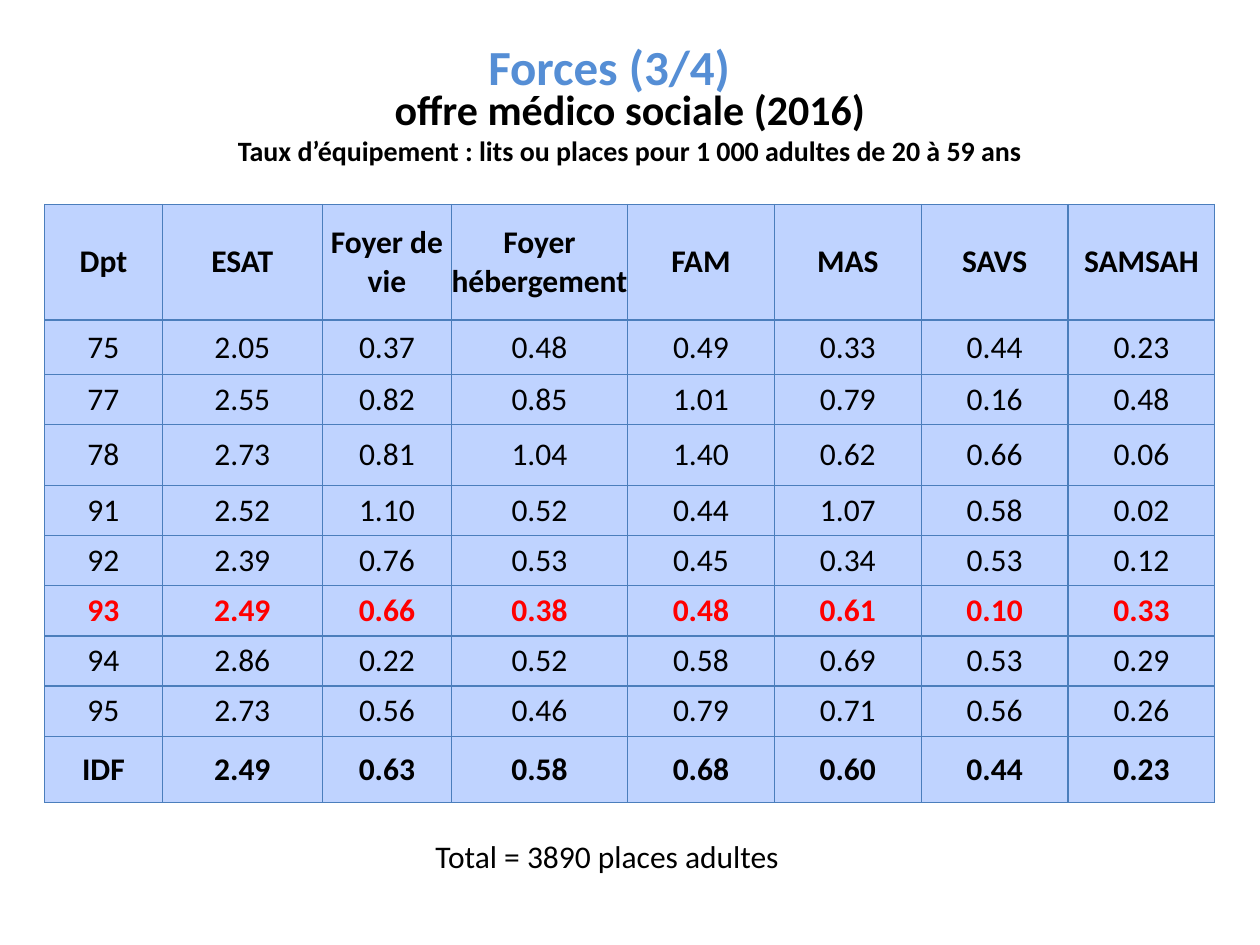
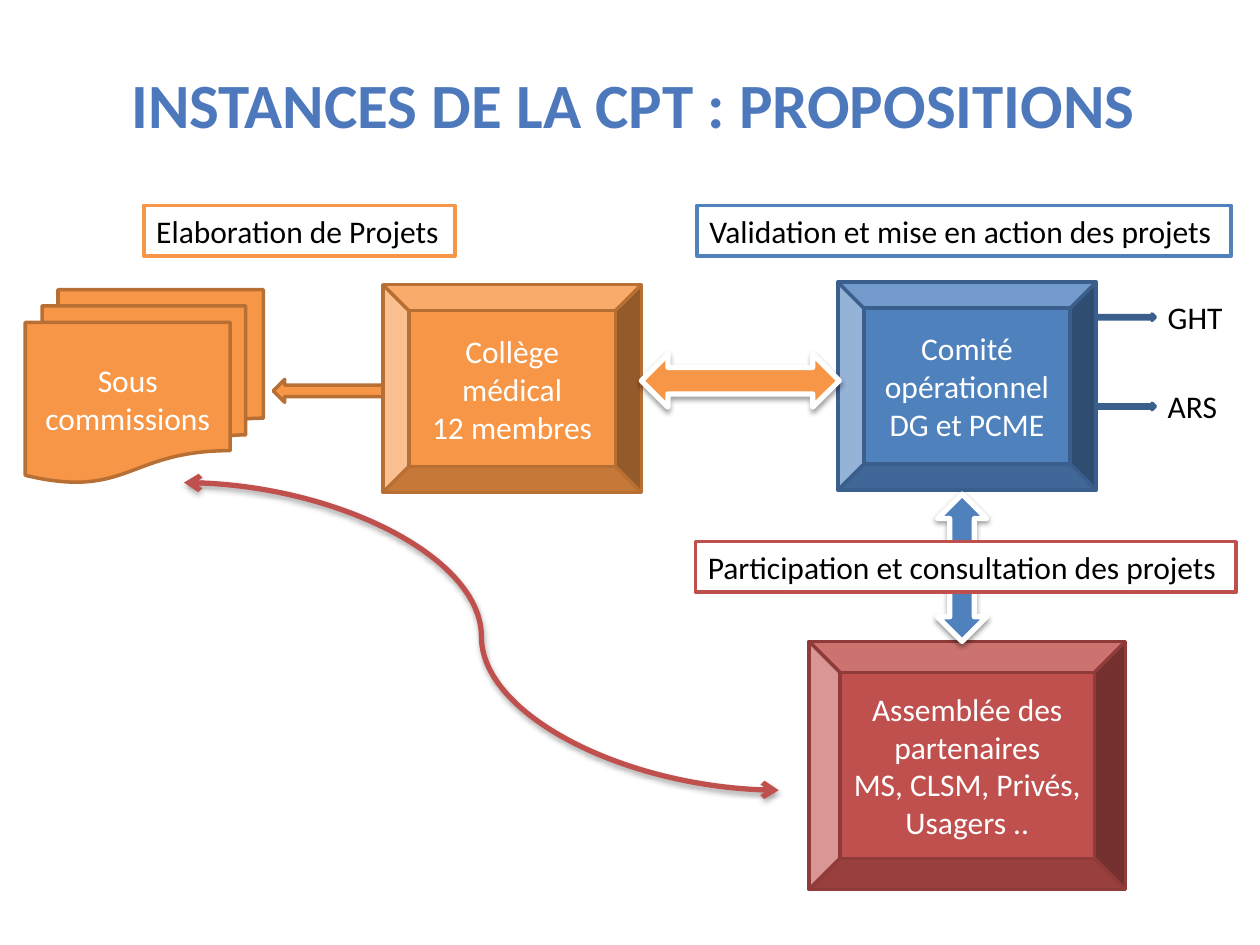
from dataclasses import dataclass

from lxml import etree
from pptx import Presentation
from pptx import util as u
from pptx.dml.color import RGBColor
from pptx.enum import shapes, text
from pptx.oxml import ns

SHAPE = shapes.MSO_SHAPE
ALIGN = text.PP_ALIGN
ANCHOR = text.MSO_ANCHOR


@dataclass(frozen=True)
class Theme:
    font: str = "Calibri"
    black: str = "000000"
    white: str = "FFFFFF"
    red: str = "FF0000"
    heading: str = "558ED5"
    title: str = "4D79BC"
    cell: str = "BFD3FF"
    grid: str = "4B7EBC"
    orange: str = "F79646"
    orange_edge: str = "B76F34"
    blue: str = "4F81BD"
    blue_edge: str = "3A5F8C"
    brick: str = "C0504D"
    brick_edge: str = "8E3B39"
    title_size: float = 36
    heading_size: float = 28
    subtitle_size: float = 24
    note_size: float = 16
    body_size: float = 18
    edge: float = 2
    thick: float = 3
    hairline: float = 0.75


THEME = Theme()

HEADERS = ["Dpt", "ESAT", "Foyer de vie", "Foyer hébergement",
           "FAM", "MAS", "SAVS", "SAMSAH"]
RATES = [
    ["75", "2.05", "0.37", "0.48", "0.49", "0.33", "0.44", "0.23"],
    ["77", "2.55", "0.82", "0.85", "1.01", "0.79", "0.16", "0.48"],
    ["78", "2.73", "0.81", "1.04", "1.40", "0.62", "0.66", "0.06"],
    ["91", "2.52", "1.10", "0.52", "0.44", "1.07", "0.58", "0.02"],
    ["92", "2.39", "0.76", "0.53", "0.45", "0.34", "0.53", "0.12"],
    ["93", "2.49", "0.66", "0.38", "0.48", "0.61", "0.10", "0.33"],
    ["94", "2.86", "0.22", "0.52", "0.58", "0.69", "0.53", "0.29"],
    ["95", "2.73", "0.56", "0.46", "0.79", "0.71", "0.56", "0.26"],
    ["IDF", "2.49", "0.63", "0.58", "0.68", "0.60", "0.44", "0.23"],
]
COLUMN_WIDTHS = [2.37, 3.23, 2.6, 3.55] + [2.96] * 4
ROW_HEIGHTS = [2.33, 1.1, 1.01, 1.23] + [1.01] * 5 + [1.34]


def cm(*lengths):
    return [u.Cm(length) for length in lengths]


def rgb(color):
    return RGBColor.from_string(color)


def add_span(para, words, size=THEME.body_size, color=THEME.black, bold=False):
    span = para.add_run()
    span.text = words
    span.font.name = THEME.font
    span.font.size = u.Pt(size)
    span.font.bold = bold
    span.font.color.rgb = rgb(color)


def add_effects(shape, shadow_alpha=None):
    """End the shape's properties with an effect list: empty, or a soft shadow below."""
    effects = etree.SubElement(shape._element.spPr, ns.qn("a:effectLst"))
    if shadow_alpha is None:
        return
    shadow = etree.SubElement(
        effects, ns.qn("a:outerShdw"), blurRad=str(u.Pt(3.1)),
        dist=str(u.Pt(1.7)), dir="5400000", rotWithShape="0")
    color = etree.SubElement(shadow, ns.qn("a:srgbClr"), val=THEME.black)
    etree.SubElement(color, ns.qn("a:alpha"), val=str(shadow_alpha * 1000))


def set_line(line, color, width):
    line.color.rgb = rgb(color)
    line.width = u.Pt(width)


def place_title(page, at, anchor=ANCHOR.MIDDLE):
    """Position the title placeholder and return its empty centred paragraph."""
    title = page.shapes.title
    title.left, title.top, title.width, title.height = cm(*at)
    frame = title.text_frame
    frame.auto_size = text.MSO_AUTO_SIZE.NONE
    frame.word_wrap = True
    frame.vertical_anchor = anchor
    if anchor == ANCHOR.TOP:
        frame.margin_top = 0
    para = frame.paragraphs[0]
    para.alignment = ALIGN.CENTER
    return para


def add_label(page, at, words, edge=None):
    """Add one unwrapped line of text, on white with a border if edge is given."""
    box = page.shapes.add_textbox(*cm(*at))
    frame = box.text_frame
    frame.word_wrap = False
    frame.auto_size = text.MSO_AUTO_SIZE.SHAPE_TO_FIT_TEXT
    add_span(frame.paragraphs[0], words)
    if edge:
        box.fill.solid()
        box.fill.fore_color.rgb = rgb(THEME.white)
        set_line(box.line, edge, THEME.edge)


def add_figure(page, kind, at, fill, edge, lines=(), width=THEME.edge, shadow_alpha=None):
    figure = page.shapes.add_shape(kind, *cm(*at))
    figure.fill.solid()
    figure.fill.fore_color.rgb = rgb(fill)
    set_line(figure.line, edge, width)
    add_effects(figure, shadow_alpha)
    frame = figure.text_frame
    frame.word_wrap = True
    frame.vertical_anchor = ANCHOR.MIDDLE
    for index, words in enumerate(lines):
        para = frame.add_paragraph() if index else frame.paragraphs[0]
        para.alignment = ALIGN.CENTER
        add_span(para, words, color=THEME.white)


def add_curve(page, start, end, color):
    """Add a curved connector with an open arrowhead at each end."""
    curve = page.shapes.add_connector(shapes.MSO_CONNECTOR.CURVE, *cm(*start, *end))
    set_line(curve.line, color, THEME.thick)
    line = curve._element.spPr.find(ns.qn("a:ln"))
    for tip in ("a:headEnd", "a:tailEnd"):
        etree.SubElement(line, ns.qn(tip), type="arrow")
    add_effects(curve, shadow_alpha=35)


def style_cell(cell, words, color, bold):
    properties = cell._tc.get_or_add_tcPr()
    for side in ("a:lnL", "a:lnR", "a:lnT", "a:lnB"):
        border = etree.SubElement(properties, ns.qn(side), w=str(u.Pt(THEME.hairline)))
        paint = etree.SubElement(border, ns.qn("a:solidFill"))
        etree.SubElement(paint, ns.qn("a:srgbClr"), val=THEME.grid)
    cell.fill.solid()
    cell.fill.fore_color.rgb = rgb(THEME.cell)
    cell.vertical_anchor = ANCHOR.MIDDLE
    cell.margin_left = cell.margin_right = cell.margin_top = cell.margin_bottom = 0
    para = cell.text_frame.paragraphs[0]
    para.alignment = ALIGN.CENTER
    add_span(para, words, color=color, bold=bold)


def add_rate_table(page, left, top):
    rows = [HEADERS] + RATES
    table = page.shapes.add_table(
        len(rows), len(HEADERS),
        *cm(left, top, sum(COLUMN_WIDTHS), sum(ROW_HEIGHTS))).table
    table.first_row = table.horz_banding = False
    for column, width in zip(table.columns, COLUMN_WIDTHS):
        column.width = u.Cm(width)
    for row, height, values in zip(table.rows, ROW_HEIGHTS, rows):
        row.height = u.Cm(height)
        color = THEME.red if values[0] == "93" else THEME.black
        bold = values[0] in ("Dpt", "93", "IDF")
        for cell, words in zip(row.cells, values):
            style_cell(cell, words, color, bold)


def build_strengths(page):
    title = place_title(page, (0.9, 1.68, 23.6, 2.29), ANCHOR.TOP)
    add_span(title, "offre médico sociale (2016)", THEME.subtitle_size, bold=True)
    title.add_line_break()
    add_span(title, "Taux d’équipement : lits ou places pour 1 000 adultes de 20 à 59 ans",
             THEME.note_size, bold=True)

    add_rate_table(page, 0.9, 4.12)

    heading = page.shapes.add_textbox(*cm(1.27, 0.74, 22.02, 1.55)).text_frame
    heading.word_wrap = True
    heading.margin_top = 0
    para = heading.paragraphs[0]
    para.alignment = ALIGN.CENTER
    add_span(para, "Forces (3/4)", THEME.heading_size, THEME.heading, bold=True)

    add_label(page, (8.53, 16.74, 7.52, 1.02), "Total = 3890 places adultes")


def build_bodies(page):
    title = place_title(page, (1.55, 0.91, 22.43, 2.36))
    add_span(title, "INSTANCES DE LA CPT : PROPOSITIONS",
             THEME.title_size, THEME.title, bold=True)

    orange = (THEME.orange, THEME.orange_edge)
    blue = (THEME.blue, THEME.blue_edge)
    brick = (THEME.brick, THEME.brick_edge)
    add_figure(page, SHAPE.BEVEL, (7.72, 5.74, 5.21, 4.19), *orange,
               ["Collège médical", "12 membres"])
    add_figure(page, SHAPE.BEVEL, (16.89, 5.69, 5.21, 4.19), *blue,
               ["Comité opérationnel", "DG et PCME"])
    add_figure(page, SHAPE.BEVEL, (16.31, 12.93, 6.38, 5), *brick,
               ["Assemblée des partenaires", "MS, CLSM, Privés, Usagers .."])
    add_figure(page, SHAPE.FLOWCHART_MULTIDOCUMENT, (0.51, 5.84, 4.8, 3.89), *orange,
               ["Sous commissions"])

    for partner, top in (("GHT", 5.88), ("ARS", 7.68)):
        add_figure(page, SHAPE.RIGHT_ARROW, (22.1, top + 0.45, 1.19, 0.13), *blue)
        add_label(page, (23.29, top, 1.75, 1.02), partner)

    add_figure(page, SHAPE.LEFT_RIGHT_ARROW, (12.93, 7.14, 3.99, 1.07),
               THEME.orange, THEME.white, width=THEME.thick, shadow_alpha=38)
    add_figure(page, SHAPE.LEFT_ARROW, (5.51, 7.65, 2.21, 0.46), *orange)
    add_figure(page, SHAPE.UP_DOWN_ARROW, (18.9, 9.96, 0.99, 2.97),
               THEME.blue, THEME.white, width=THEME.thick, shadow_alpha=38)
    add_curve(page, (3.71, 9.73), (15.7, 15.93), THEME.brick)

    for words, left, top, width, edge in (
        ("Elaboration de Projets", 2.9, 4.14, 6.27, THEME.orange),
        ("Validation et mise en action des projets", 14.05, 4.14, 10.77, THEME.blue),
        ("Participation et consultation des projets", 14.02, 10.92, 10.9, THEME.brick),
    ):
        add_label(page, (left, top, width, 1.02), words, edge)


def main():
    deck = Presentation()
    deck.slide_width, deck.slide_height = cm(25.4, 19.05)
    title_only = deck.slide_layouts[5]
    for build in (build_strengths, build_bodies):
        build(deck.slides.add_slide(title_only))
    deck.save("out.pptx")


if __name__ == "__main__":
    main()
